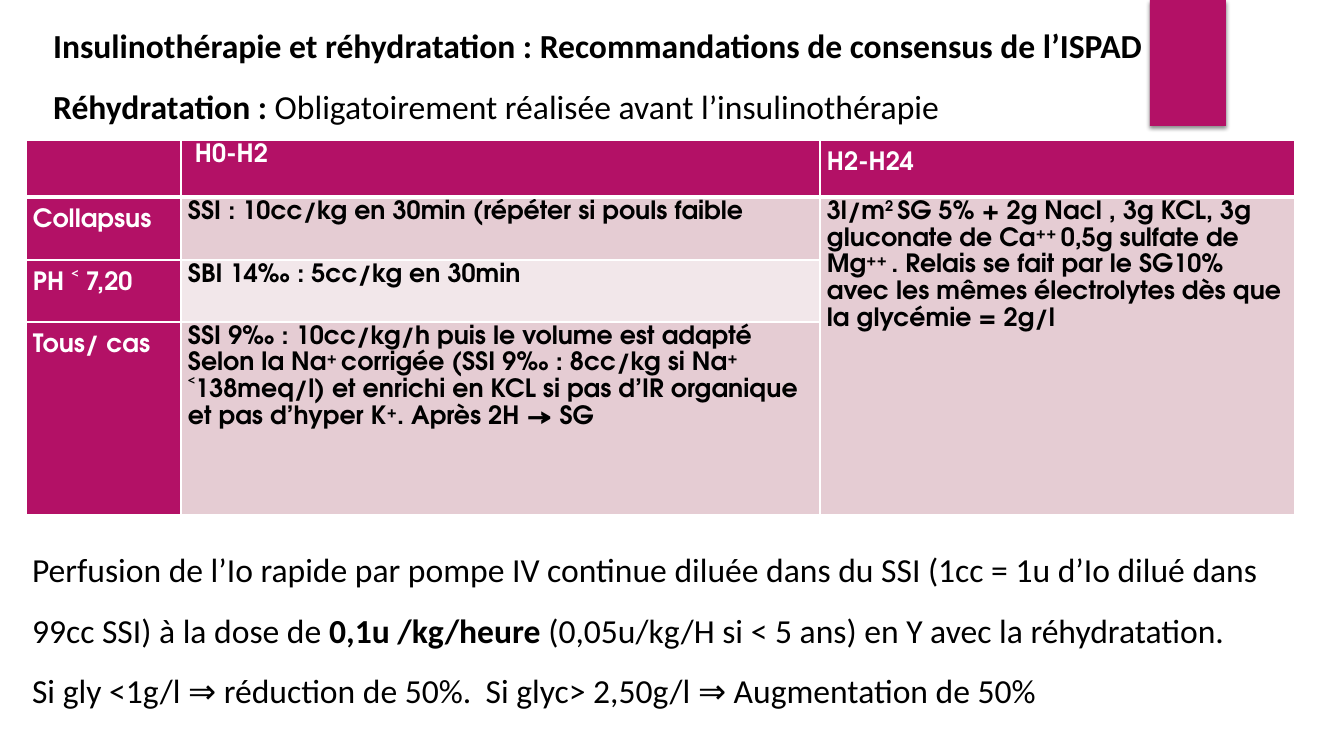
"""Build the slide on rehydration and insulin therapy."""
from lxml.etree import SubElement as Sub
from pptx import Presentation
from pptx.dml.color import RGBColor as Rgb
from pptx.enum.shapes import MSO_SHAPE as Kind
from pptx.enum.text import MSO_ANCHOR as Anchor, MSO_AUTO_SIZE as Auto, PP_ALIGN as Align
from pptx.oxml.ns import qn
from pptx.util import Emu, Pt

HUES = {"plum": "B31166", "rose": "E5CCD3", "pale": "F2E7EA",
        "white": "FFFFFF", "black": "000000"}
HEAD = [
    "Insulinothérapie et réhydratation : Recommandations de consensus de l’ISPAD",
    "Réhydratation : *Obligatoirement réalisée avant l’insulinothérapie",
]
BODY = [
    "Perfusion de l’Io rapide par pompe IV continue diluée dans du SSI "
    "(1cc = 1u d’Io dilué dans 99cc SSI) à la dose de *0,1u /kg/heure *"
    "(0,05u/kg/H si ˂ 5 ans) en Y avec la réhydratation.",
    "Si gly ˂1g/l ⇒ réduction de 50%.\tSi glyc˃ 2,50g/l ⇒ Augmentation de 50%",
]
DAY = ("3l/m^2 ^SG 5% + 2g Nacl , 3g KCL, 3g gluconate de Ca^++ ^0,5g sulfate de "
       "Mg^++ ^. Relais se fait par le SG10% avec les mêmes électrolytes dès que "
       "la glycémie = 2g/l")
ROWS = [
    [[], ["H0-H2"], ["H2-H24"]],
    [["Collapsus"], ["SSI : 10cc/kg en 30min (répéter si pouls faible"], [DAY]],
    [["PH ˂ 7,20"], ["SBI 14‰ : 5cc/kg en 30min"], []],
    [["Tous/ cas"], ["SSI 9‰ : 10cc/kg/h puis le volume est adapté",
                     "Selon la Na^+ ^corrigée (SSI 9‰ : 8cc/kg si Na^+^ ˂138meq/l) "
                     "et enrichi en KCL si pas d’IR organique et pas d’hyper K^+^. "
                     "Après 2H → SG"], []],
]
WIDE = [155, 639, 475]
TALL = [57, 63, 62, 193]
SPOT = {"head": (18, 0, 1141, 132), "body": (22, 524, 1293, 194),
        "tab": (1150, 0, 76, 126), "grid": (26, 140, sum(WIDE), sum(TALL))}


def px(n):
    return Emu(round(n * 914400 / 100.8))


def write(frame, lines, font="Calibri", size=24, hue="black", bold=False,
          gap=1.5, left=0, stop=0):
    """Fill a frame; * flips bold and ^ marks superscript."""
    frame.word_wrap = True
    for i, line in enumerate(lines):
        para = frame.paragraphs[0] if i == 0 else frame.add_paragraph()
        prop = para._p.get_or_add_pPr()
        prop.set("marL", str(px(left)))
        prop.set("indent", "0")
        Sub(prop, qn("a:buNone"))
        if stop:
            tabs = Sub(prop, qn("a:tabLst"))
            Sub(tabs, qn("a:tab"), pos=str(px(stop)), algn="l")
        para.alignment = Align.LEFT
        para.line_spacing = gap
        para.space_before = para.space_after = Pt(0)
        for j, chunk in enumerate(line.split("*")):
            for k, part in enumerate(chunk.split("^")):
                if not part:
                    continue
                run = para.add_run()
                run.text = part
                run.font.name = font
                run.font.size = Pt(size)
                run.font.bold = bold != bool(j % 2)
                run.font.color.rgb = Rgb.from_string(HUES[hue])
                if k % 2:
                    run.font._element.set("baseline", "30000")


def place(holder, name, lines, **form):
    holder.left, holder.top, holder.width, holder.height = map(px, SPOT[name])
    frame = holder.text_frame
    frame.auto_size = Auto.NONE
    frame.vertical_anchor = Anchor.TOP
    write(frame, lines, **form)


def paint(shape, hue):
    shape.fill.solid()
    shape.fill.fore_color.rgb = Rgb.from_string(HUES[hue])


def edge(cell, row):
    prop = cell._tc.get_or_add_tcPr()
    for side in "LRTB":
        thick = 3 if (row, side) in ((0, "B"), (1, "T")) else 1
        line = Sub(prop, qn("a:ln" + side), w=str(Pt(thick)))
        Sub(Sub(line, qn("a:solidFill")), qn("a:srgbClr"), val=HUES["white"])


def draw_tab(slide):
    tab = slide.shapes.add_shape(Kind.RECTANGLE, *map(px, SPOT["tab"]))
    paint(tab, "plum")
    tab.line.fill.background()
    tab.shadow.inherit = False
    glow = tab._element.spPr.find(qn("a:effectLst"))
    shade = Sub(glow, qn("a:outerShdw"), blurRad=str(Pt(3)), dist=str(Pt(2)),
                dir="5400000", algn="ctr", rotWithShape="0")
    tone = Sub(shade, qn("a:srgbClr"), val=HUES["black"])
    Sub(tone, qn("a:alpha"), val="45000")
    slide.shapes._spTree.insert(2, tab._element)


def draw_grid(slide):
    grid = slide.shapes.add_table(len(TALL), len(WIDE), *map(px, SPOT["grid"])).table
    grid.first_row = grid.horz_banding = False
    for col, wide in zip(grid.columns, WIDE):
        col.width = px(wide)
    for row, tall in zip(grid.rows, TALL):
        row.height = px(tall)
    grid.cell(1, 2).merge(grid.cell(3, 2))
    for r, row in enumerate(ROWS):
        for c, lines in enumerate(row):
            cell = grid.cell(r, c)
            dark = r == 0 or c == 0
            edge(cell, r)
            paint(cell, "plum" if dark else "pale" if (r, c) == (2, 1) else "rose")
            cell.margin_left = cell.margin_right = px(7)
            cell.margin_top = cell.margin_bottom = 0
            write(cell.text_frame, lines, font="TeX Gyre Adventor", size=18, bold=True,
                  hue="white" if dark else "black",
                  gap=1.15 if c == 1 or not dark else 1.5,
                  left=7 if (r, c) == (0, 1) else 0)


def main():
    deck = Presentation()
    deck.slide_width, deck.slide_height = px(1344), px(756)
    slide = deck.slides.add_slide(deck.slide_layouts[1])
    draw_tab(slide)
    draw_grid(slide)
    place(slide.shapes.title, "head", HEAD, bold=True, left=25)
    place(slide.placeholders[1], "body", BODY, stop=470)
    deck.save("out.pptx")


if __name__ == "__main__":
    main()
